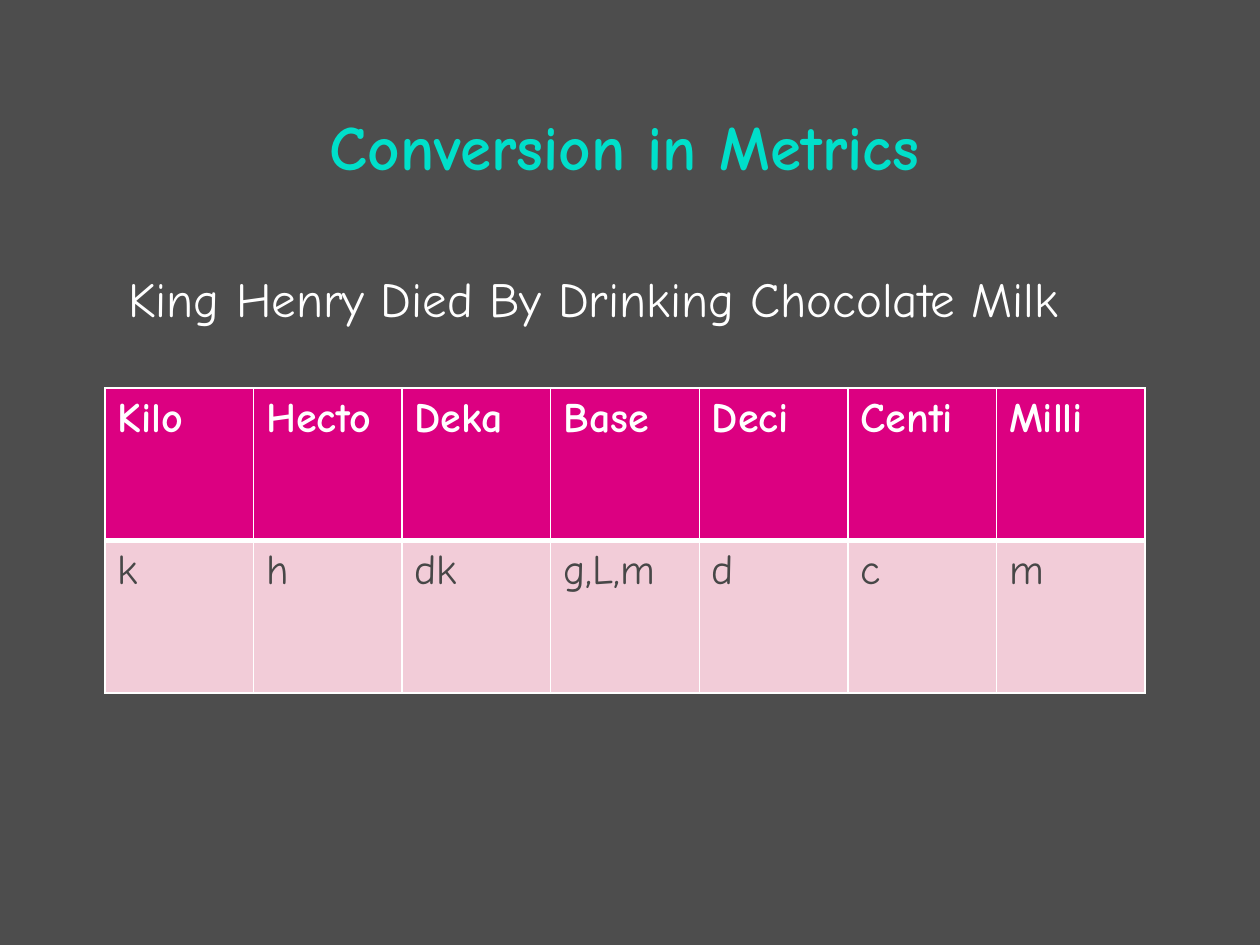
import pptx
import pptx.dml.color
import pptx.enum.text
import pptx.oxml
import pptx.oxml.ns
import pptx.util

PX = 914400 / 126
FONT = "Comic Neue"
WHITE = "FFFFFF"
UNITS = [
    ("Kilo", "k"), ("Hecto", "h"), ("Deka", "dk"), ("Base", "g,L,m"),
    ("Deci", "d"), ("Centi", "c"), ("Milli", "m"),
]
ROWS = [
    {"fill": "DC0081", "color": WHITE, "bold": True, "top": 1, "bottom": 3},
    {"fill": "F2CCD8", "color": "474747", "bold": False, "top": 3, "bottom": 1},
]


def px(*lengths):
    """Turn pixel lengths into a list of EMU lengths."""
    return [pptx.util.Emu(round(length * PX)) for length in lengths]


def set_color(target, color):
    """Give a fill a solid colour from a hex string."""
    target.solid()
    target.fore_color.rgb = pptx.dml.color.RGBColor.from_string(color)


def write_text(text_frame, text, size, color, bold=False):
    """Write one formatted run in the first paragraph."""
    run = text_frame.paragraphs[0].add_run()
    run.text = text
    values = {"name": FONT, "size": pptx.util.Pt(size), "bold": bold}
    for name, value in values.items():
        setattr(run.font, name, value)
    set_color(run.font.fill, color)


def place(shape, *box):
    """Move and size a shape by its pixel box."""
    for name, value in zip(("left", "top", "width", "height"), px(*box)):
        setattr(shape, name, value)


def add_title(slide, text):
    """Fill the title placeholder."""
    title = slide.shapes.title
    place(title, 84, 32, 1081, 157)
    title.text_frame.vertical_anchor = pptx.enum.text.MSO_ANCHOR.BOTTOM
    title.text_frame.paragraphs[0].alignment = pptx.enum.text.PP_ALIGN.CENTER
    write_text(title.text_frame, text, 36, "00DFCA", True)


def add_mnemonic(slide, text):
    """Add the sentence above the table."""
    text_frame = slide.shapes.add_textbox(*px(116, 262, 1144, 72)).text_frame
    text_frame.word_wrap = True
    text_frame.auto_size = pptx.enum.text.MSO_AUTO_SIZE.SHAPE_TO_FIT_TEXT
    write_text(text_frame, text, 28, WHITE)


def add_borders(cell, widths):
    """Draw white cell borders with widths in points by side."""
    properties = cell._tc.get_or_add_tcPr()
    for side, width in widths.items():
        properties.append(pptx.oxml.parse_xml(
            f'<a:ln{side} {pptx.oxml.ns.nsdecls("a")} w="{pptx.util.Pt(width)}">'
            f'<a:solidFill><a:srgbClr val="{WHITE}"/></a:solidFill></a:ln{side}>'
        ))


def add_prefix_table(slide):
    """Add the table of metric prefixes and symbols."""
    frame = slide.shapes.add_table(len(ROWS), len(UNITS), *px(105, 388, 1040, 305))
    for column, unit in enumerate(UNITS):
        for row, (text, style) in enumerate(zip(unit, ROWS)):
            cell = frame.table.cell(row, column)
            add_borders(cell, {"L": 1, "R": 1, "T": style["top"], "B": style["bottom"]})
            set_color(cell.fill, style["fill"])
            write_text(cell.text_frame, text, 24, style["color"], style["bold"])


def main():
    """Build and save the slide."""
    presentation = pptx.Presentation()
    presentation.slide_width, presentation.slide_height = px(1260, 945)
    slide = presentation.slides.add_slide(presentation.slide_layouts[5])
    set_color(slide.background.fill, "4D4D4D")
    add_title(slide, "Conversion in Metrics")
    add_prefix_table(slide)
    add_mnemonic(slide, "King Henry Died By Drinking Chocolate Milk")
    presentation.save("out.pptx")


if __name__ == "__main__":
    main()
